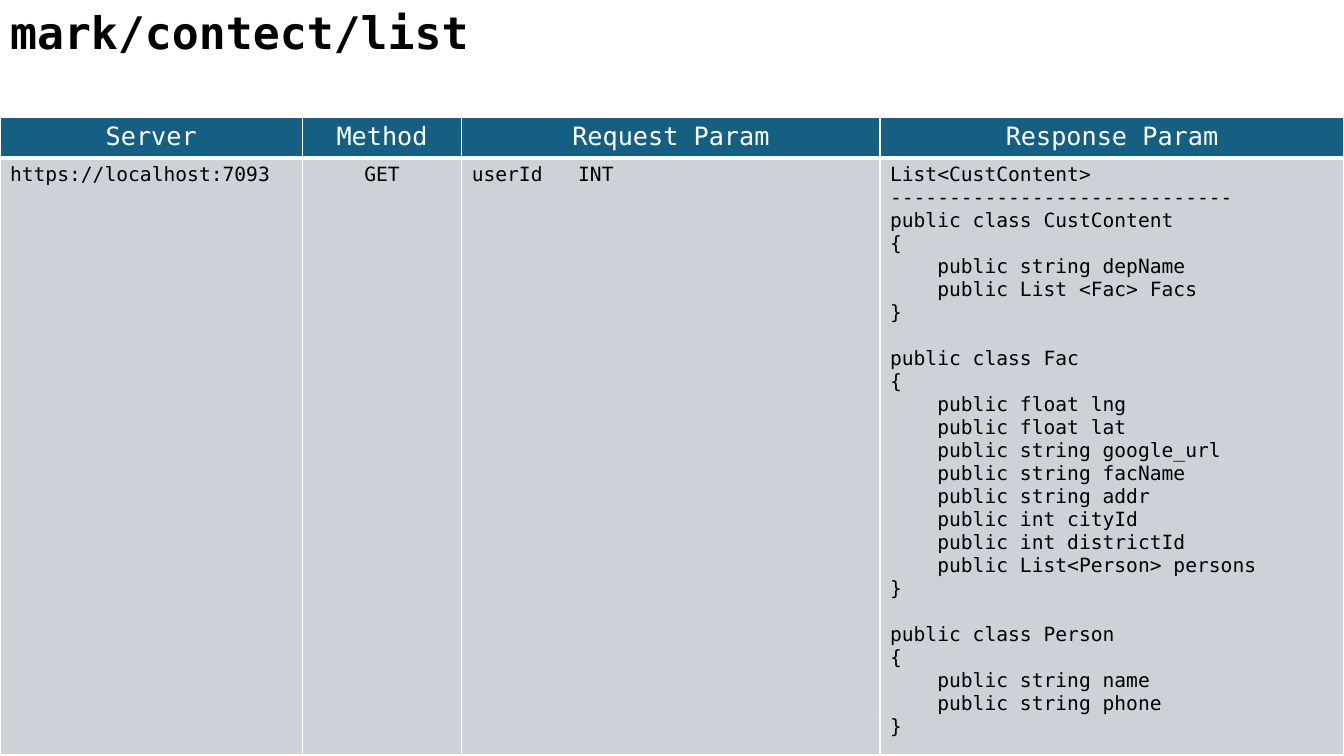
from lxml.etree import SubElement
from pptx import Presentation
from pptx.dml.color import RGBColor
from pptx.enum.text import MSO_ANCHOR as Anchor, MSO_AUTO_SIZE as AutoSize, PP_ALIGN as Align
from pptx.oxml.ns import qn
from pptx.util import Pt

FONT = "DejaVu Sans Mono"
WHITE = RGBColor(0xFF, 0xFF, 0xFF)
BLACK = RGBColor(0x00, 0x00, 0x00)
TEAL = RGBColor(0x15, 0x60, 0x82)
GREY = RGBColor(0xCC, 0xD2, 0xD8)

COLUMN_WIDTHS = [216, 113.8, 298.8, 331.4]
HEADER_HEIGHT = 29.2
BODY_HEIGHT = 417
CODE_LINE = 16.4
HEADER_BORDERS = {"L": 1, "R": 1, "T": 1, "B": 3}
BODY_BORDERS = {"L": 1, "R": 1, "B": 1}

HEADINGS = ["Server", "Method", "Request Param", "Response Param"]
RESULT_TYPE = ["List<CustContent>", "-----------------------------"]
CLASSES = {
    "CustContent": ["string depName", "List <Fac> Facs"],
    "Fac": [
        "float lng",
        "float lat",
        "string google_url",
        "string facName",
        "string addr",
        "int cityId",
        "int districtId",
        "List<Person> persons",
    ],
    "Person": ["string name", "string phone"],
}


def add_span(para, text, size, color, bold=False):
    span = para.add_run()
    span.text = text
    font = span.font
    font.name, font.size, font.bold = FONT, Pt(size), bold
    font.color.rgb = color


def class_lines(name, fields):
    members = [f"    public {field}" for field in fields]
    return [f"public class {name}", "{", *members, "}"]


def style_cell(cell, fill, borders):
    properties = cell._tc.get_or_add_tcPr()
    for side, width in borders.items():
        line = SubElement(properties, qn(f"a:ln{side}"), w=str(Pt(width)))
        paint = SubElement(line, qn("a:solidFill"))
        SubElement(paint, qn("a:srgbClr"), val=str(WHITE))
    cell.fill.solid()
    cell.fill.fore_color.rgb = fill


def write_cell(cell, lines, size, color, align=Align.LEFT):
    frame = cell.text_frame
    for index, text in enumerate(lines):
        para = frame.add_paragraph() if index else frame.paragraphs[0]
        para.alignment = align
        add_span(para, text, size, color)


def write_request(cell):
    para = cell.text_frame.paragraphs[0]
    tabs = SubElement(para._p.get_or_add_pPr(), qn("a:tabLst"))
    SubElement(tabs, qn("a:tab"), pos=str(Pt(76)), algn="l")
    add_span(para, "userId\tINT", 14, BLACK)


def write_response(cell):
    lines = list(RESULT_TYPE)
    starts = []
    for name, fields in CLASSES.items():
        starts.append(len(lines))
        lines += class_lines(name, fields)
    write_cell(cell, lines, 14, BLACK)
    for start in starts[1:]:
        cell.text_frame.paragraphs[start].space_before = Pt(CODE_LINE)


def add_title(page, text):
    title = page.shapes.title
    title.left, title.top, title.width, title.height = Pt(0), Pt(0), Pt(460), Pt(46)
    frame = title.text_frame
    frame.vertical_anchor = Anchor.TOP
    frame.auto_size = AutoSize.SHAPE_TO_FIT_TEXT
    para = frame.paragraphs[0]
    para.alignment = Align.LEFT
    add_span(para, text, 32, BLACK, bold=True)


def add_endpoint_table(page):
    table = page.shapes.add_table(
        2, len(HEADINGS), Pt(0), Pt(83.5),
        Pt(sum(COLUMN_WIDTHS)), Pt(HEADER_HEIGHT + BODY_HEIGHT),
    ).table
    table.horz_banding = False
    table.rows[0].height, table.rows[1].height = Pt(HEADER_HEIGHT), Pt(BODY_HEIGHT)
    for index, (width, heading) in enumerate(zip(COLUMN_WIDTHS, HEADINGS)):
        table.columns[index].width = Pt(width)
        header = table.cell(0, index)
        style_cell(header, TEAL, HEADER_BORDERS)
        write_cell(header, [heading], 18, WHITE, Align.CENTER)
        style_cell(table.cell(1, index), GREY, BODY_BORDERS)
    server, method, request, response = table.rows[1].cells
    write_cell(server, ["https://localhost:7093"], 14, BLACK)
    write_cell(method, ["GET"], 14, BLACK, Align.CENTER)
    write_request(request)
    write_response(response)


def main():
    deck = Presentation()
    deck.slide_width, deck.slide_height = Pt(960), Pt(540)
    page = deck.slides.add_slide(deck.slide_layouts[5])
    add_title(page, "mark/contect/list")
    add_endpoint_table(page)
    deck.save("out.pptx")


if __name__ == "__main__":
    main()
